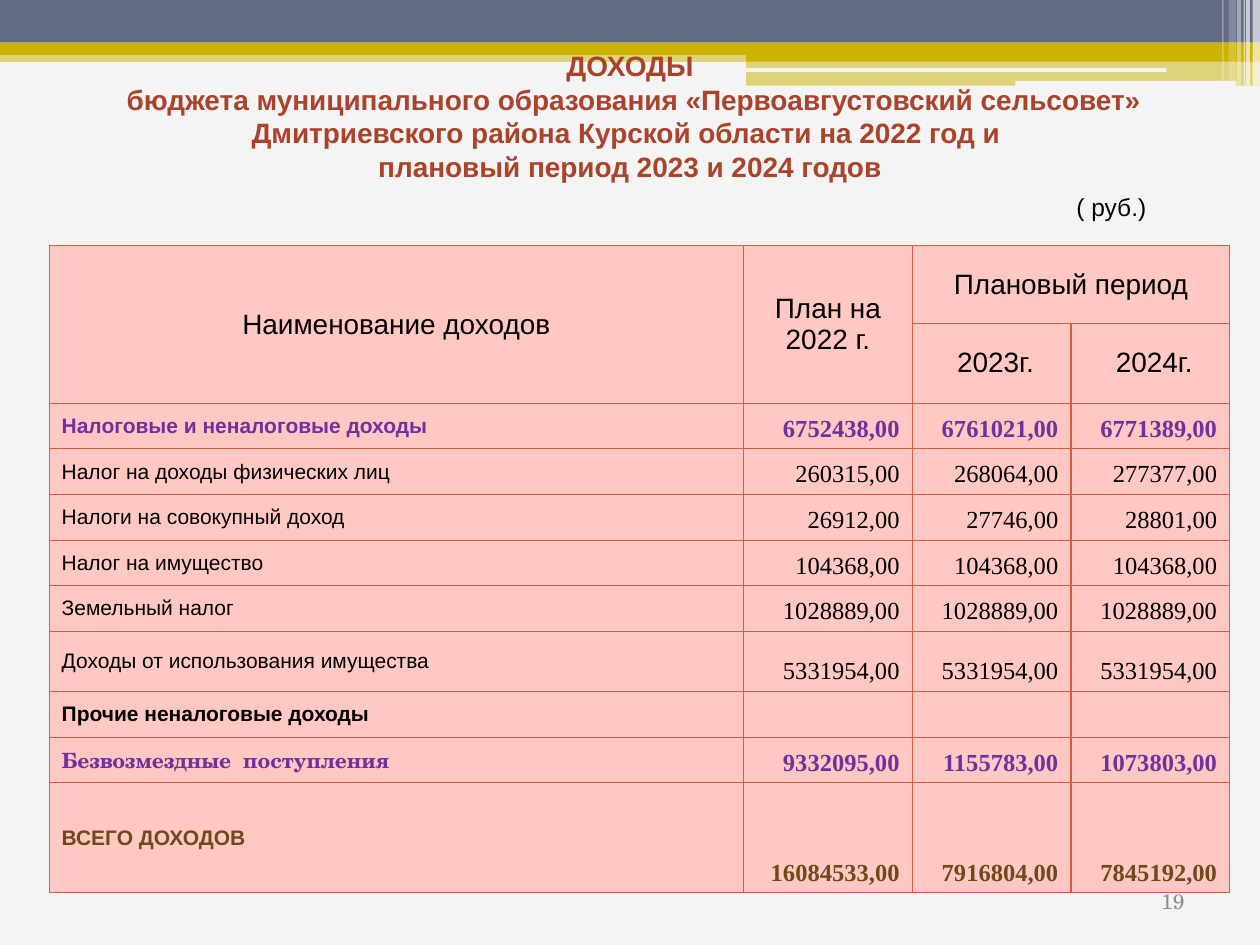
from dataclasses import dataclass

from lxml.etree import SubElement
from pptx import Presentation
from pptx.dml.color import RGBColor as RGB
from pptx.enum.shapes import MSO_SHAPE as SHAPE
from pptx.enum.text import MSO_ANCHOR as ANCHOR, PP_ALIGN as ALIGN
from pptx.oxml.ns import qn
from pptx.util import Cm, Pt


@dataclass(frozen=True)
class Theme:
    paper: str = "F4F4F4"
    white: str = "FFFFFF"
    slate: str = "646B86"
    gold: str = "CCB400"
    rust: str = "A9432B"
    cell: str = "FFC8C2"
    border: str = "D05F44"
    black: str = "000000"
    purple: str = "7030A0"
    brown: str = "71481C"
    gray: str = "8C8C8C"
    sans: str = "Arial"
    serif: str = "Times New Roman"
    school: str = "TeX Gyre Schola"
    heading: int = 16
    value: int = 14
    label: int = 12


T = Theme()

BANDS = [
    (0, 1.02, 25.4, 0.23, T.gold, 50),
    (0, 0, 25.4, 0.86, T.slate, 100),
    (0, 0.86, 25.4, 0.25, T.gold, 100),
    (15.04, 0.99, 10.36, 0.25, T.gold, 100),
    (15.04, 1.22, 10.36, 0.51, T.gold, 50),
]
SLITS = [(15.01, 1.37, 8.51, 0.08), (20.47, 1.63, 4.45, 0.1)]
STRIPES = [
    (25.25, 0.15, 1.73, 65), (25.12, 0.08, 1.73, 65), (25.07, 0.03, 1.73, 60),
    (24.94, 0.08, 1.73, 40), (24.77, 0.15, 1.63, 20), (24.64, 0.03, 1.63, 30),
]
TITLE = [
    "ДОХОДЫ",
    " бюджета муниципального образования «Первоавгустовский сельсовет» "
    "Дмитриевского района Курской области на 2022 год и ",
    "плановый период 2023 и 2024 годов",
]
HEADERS = [
    (0, 0, 1, 0, "Наименование доходов"),
    (0, 1, 1, 1, "План на 2022 г."),
    (0, 2, 0, 3, "Плановый период"),
    (1, 2, 1, 2, " 2023г."),
    (1, 3, 1, 3, " 2024г."),
]
ROWS = [
    ("Налоговые и неналоговые доходы", "6752438,00", "6761021,00", "6771389,00"),
    ("Налог на доходы физических лиц", "260315,00", "268064,00", "277377,00"),
    ("Налоги на совокупный доход", "26912,00", "27746,00", "28801,00"),
    ("Налог на имущество", "104368,00", "104368,00", "104368,00"),
    ("Земельный налог", "1028889,00", "1028889,00", "1028889,00"),
    ("Доходы от использования имущества", "5331954,00", "5331954,00", "5331954,00"),
    ("Прочие неналоговые доходы", "", "", ""),
    ("Безвозмездные  поступления", "9332095,00", "1155783,00", "1073803,00"),
    ("ВСЕГО ДОХОДОВ", "16084533,00", "7916804,00", "7845192,00"),
]
ROW_COLORS = {0: T.purple, 7: T.purple, 8: T.brown}
BOLD_ROWS = {0, 6, 7, 8}
LABEL_FONTS = {7: T.school}
COL_WIDTHS = [14, 3.4, 3.2, 3.2]
ROW_HEIGHTS = [1.57, 1.6] + [0.92] * 5 + [1.21, 0.92, 0.92, 2.22]


def add_band(s, box, color, opacity=100, kind=SHAPE.RECTANGLE):
    sp = s.shapes.add_shape(kind, *map(Cm, box))
    sp.shadow.inherit = False
    sp.line.fill.background()
    sp.fill.solid()
    sp.fill.fore_color.rgb = RGB.from_string(color)
    if opacity < 100:
        clr = sp.fill._xPr.find(".//" + qn("a:srgbClr"))
        SubElement(clr, qn("a:alpha"), val=str(opacity * 1000))


def write(p, text, size, color, name=T.sans, bold=False, align=ALIGN.LEFT):
    p.alignment = align
    if not text:
        p._p.get_or_add_endParaRPr().set("sz", str(size * 100))
        return
    r = p.add_run()
    r.text = text
    for key, value in {"size": Pt(size), "name": name, "bold": bold}.items():
        setattr(r.font, key, value)
    r.font.color.rgb = RGB.from_string(color)


def add_box(s, box):
    tf = s.shapes.add_textbox(*map(Cm, box)).text_frame
    tf.word_wrap = True
    tf.vertical_anchor = ANCHOR.MIDDLE
    return tf


def add_title(s):
    tf = add_box(s, (0.79, 0.84, 23.82, 3.76))
    for i, line in enumerate(TITLE):
        p = tf.paragraphs[0] if i == 0 else tf.add_paragraph()
        p.line_spacing = Pt(19.2)
        write(p, line, T.heading, T.rust, bold=True, align=ALIGN.CENTER)
    p = tf.add_paragraph()
    p.line_spacing = Pt(22)
    write(p, "( руб.)", T.value, T.black, align=ALIGN.RIGHT)
    p._p.get_or_add_pPr().set("marR", str(Cm(1.25)))


def style_cell(cell):
    tcPr = cell._tc.get_or_add_tcPr()
    for side in ("lnL", "lnR", "lnT", "lnB"):
        ln = SubElement(tcPr, qn("a:" + side), w=str(Pt(0.75)))
        fill = SubElement(ln, qn("a:solidFill"))
        SubElement(fill, qn("a:srgbClr"), val=T.border)
    cell.fill.solid()
    cell.fill.fore_color.rgb = RGB.from_string(T.cell)


def add_income_table(s):
    frame = s.shapes.add_table(
        len(ROW_HEIGHTS), len(COL_WIDTHS), Cm(0.99), Cm(4.95),
        Cm(sum(COL_WIDTHS)), Cm(sum(ROW_HEIGHTS)))
    table = frame.table
    table.first_row = table.horz_banding = False
    for col, width in zip(table.columns, COL_WIDTHS):
        col.width = Cm(width)
    for row, height in zip(table.rows, ROW_HEIGHTS):
        row.height = Cm(height)
    for cell in table.iter_cells():
        style_cell(cell)
    for top, left, bottom, right, text in HEADERS:
        cell = table.cell(top, left)
        if (top, left) != (bottom, right):
            cell.merge(table.cell(bottom, right))
        cell.vertical_anchor = ANCHOR.MIDDLE
        write(cell.text_frame.paragraphs[0], text, T.heading, T.black, align=ALIGN.CENTER)
    for i, row in enumerate(ROWS):
        color = ROW_COLORS.get(i, T.black)
        for j, text in enumerate(row):
            cell = table.cell(i + 2, j)
            p = cell.text_frame.paragraphs[0]
            if j == 0:
                cell.vertical_anchor = ANCHOR.MIDDLE
                write(p, text, T.label, color, LABEL_FONTS.get(i, T.sans), i in BOLD_ROWS)
            else:
                cell.vertical_anchor = ANCHOR.BOTTOM
                write(p, text, T.value, color, T.serif, i in BOLD_ROWS, ALIGN.RIGHT)


def main():
    prs = Presentation()
    prs.slide_width, prs.slide_height = Cm(25.4), Cm(19.05)
    s = prs.slides.add_slide(prs.slide_layouts[6])
    s.background.fill.solid()
    s.background.fill.fore_color.rgb = RGB.from_string(T.paper)
    for *box, color, opacity in BANDS:
        add_band(s, box, color, opacity)
    for box in SLITS:
        add_band(s, box, T.paper, kind=SHAPE.ROUNDED_RECTANGLE)
    for left, width, height, opacity in STRIPES:
        add_band(s, (left, 0, width, height), T.white, opacity)
    number = add_box(s, (18.21, 17.65, 5.92, 1.02))
    write(number.paragraphs[0], "19", T.label, T.gray, T.school, align=ALIGN.RIGHT)
    add_title(s)
    add_income_table(s)
    prs.save("out.pptx")


if __name__ == "__main__":
    main()
